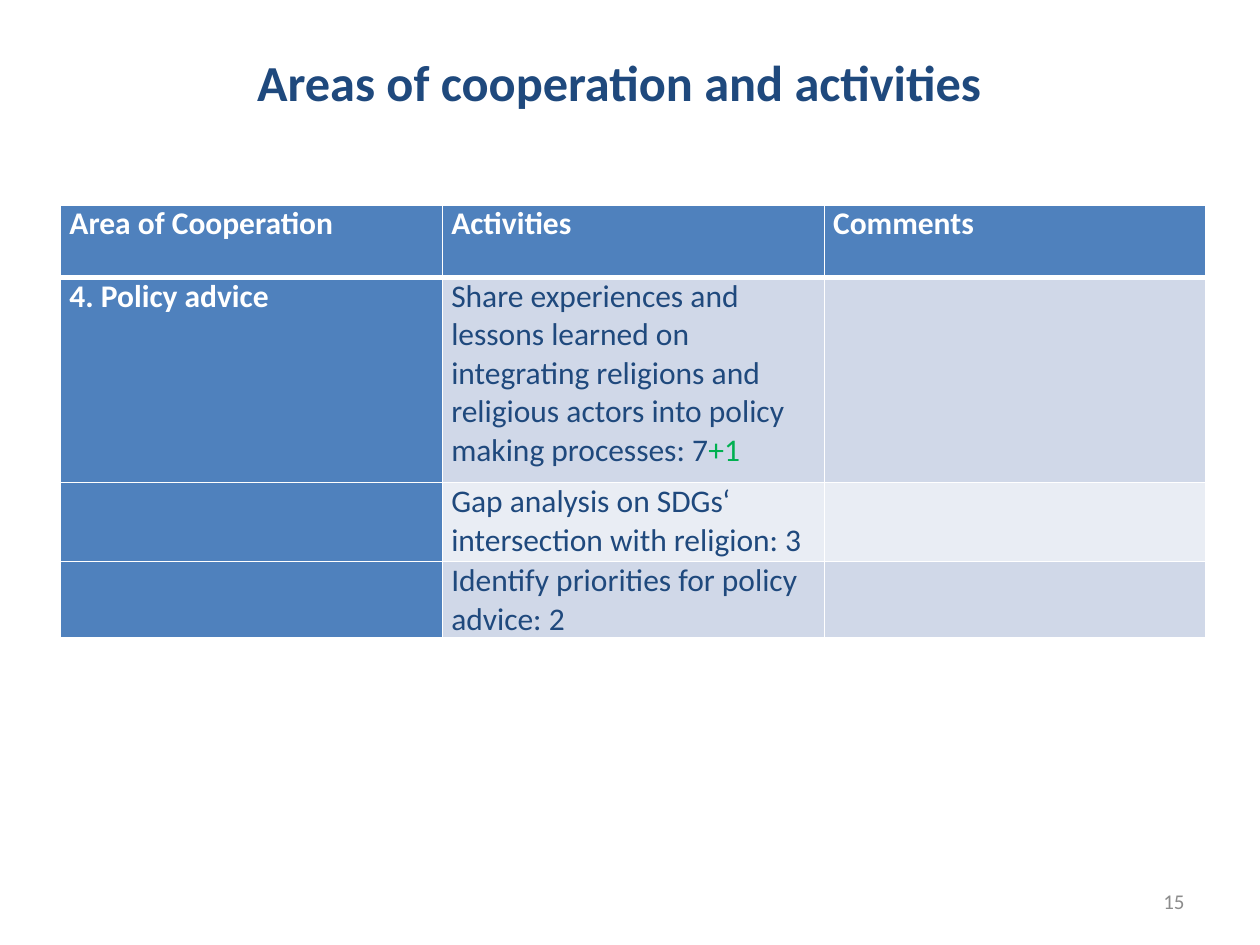
from lxml import etree
from pptx import Presentation
from pptx.dml.color import RGBColor
from pptx.enum import text
from pptx.oxml import ns
from pptx.util import Pt

NAVY, BLUE, GREEN, GREY, WHITE = "1F497D", "4F81BD", "00B050", "8C8C8C", "FFFFFF"
BANDS = ["D0D8E8", "E9EDF4"]


def color(value):
    return RGBColor.from_string(value)


def add_span(para, words, size, value, bold=False):
    span = para.add_run()
    span.text = words
    span.font.name = "Calibri"
    span.font.size = Pt(size)
    span.font.bold = bold
    span.font.color.rgb = color(value)


deck = Presentation()
deck.slide_width, deck.slide_height = Pt(720), Pt(540)
page = deck.slides.add_slide(deck.slide_layouts[6])

# Title and page number; the title sits in the upper half of its box
labels = [
    ("Areas of cooperation and activities", (48, 26, 612, 76), 38,
     text.PP_ALIGN.CENTER, 28.8, NAVY, True),
    ("15", (516, 500.5, 168, 28.75), 3.6,
     text.PP_ALIGN.RIGHT, 12, GREY, False),
]
for words, place, bottom, align, size, value, bold in labels:
    box = page.shapes.add_textbox(*[Pt(length) for length in place])
    frame = box.text_frame
    frame.word_wrap = True
    frame.vertical_anchor = text.MSO_ANCHOR.MIDDLE
    frame.margin_bottom = Pt(bottom)
    para = frame.paragraphs[0]
    para.alignment = align
    add_span(para, words, size, value, bold)

# Table content: each cell is a list of (words, color) runs
rows = [
    [[("Area of Cooperation", WHITE)], [("Activities", WHITE)], [("Comments", WHITE)]],
    [[("4. Policy advice", WHITE)],
     [("Share experiences and lessons learned on integrating religions and "
       "religious actors into policy making processes: 7", NAVY), ("+1", GREEN)], []],
    [[], [("Gap analysis on SDGs‘ intersection with religion: 3", NAVY)], []],
    [[], [("Identify priorities for policy advice: 2", NAVY)], []],
]
heights = [41.5, 117.25, 45.25, 42]
column_width = 218.2
table = page.shapes.add_table(
    len(rows), 3, Pt(34.7), Pt(117), Pt(3 * column_width), Pt(sum(heights))).table
for column in table.columns:
    column.width = Pt(column_width)

for i, row in enumerate(rows):
    table.rows[i].height = Pt(heights[i])
    for j, spans in enumerate(row):
        cell = table.cell(i, j)
        cell.margin_left = cell.margin_right = Pt(5)
        cell.margin_top = cell.margin_bottom = Pt(0)

        # White borders, thicker below the header row
        properties = cell._tc.get_or_add_tcPr()
        for side in ("L", "R", "T", "B"):
            thick = (i, side) in ((0, "B"), (1, "T"))
            line = etree.SubElement(properties, ns.qn("a:ln" + side),
                                    w=str(Pt(3 if thick else 1)))
            fill = etree.SubElement(line, ns.qn("a:solidFill"))
            etree.SubElement(fill, ns.qn("a:srgbClr"), val=WHITE)

        # Blue header row and first column, banded body
        heading = i == 0 or j == 0
        cell.fill.solid()
        cell.fill.fore_color.rgb = color(BLUE if heading else BANDS[(i - 1) % 2])
        for words, value in spans:
            add_span(cell.text_frame.paragraphs[0], words, 18, value, heading)

deck.save("out.pptx")
